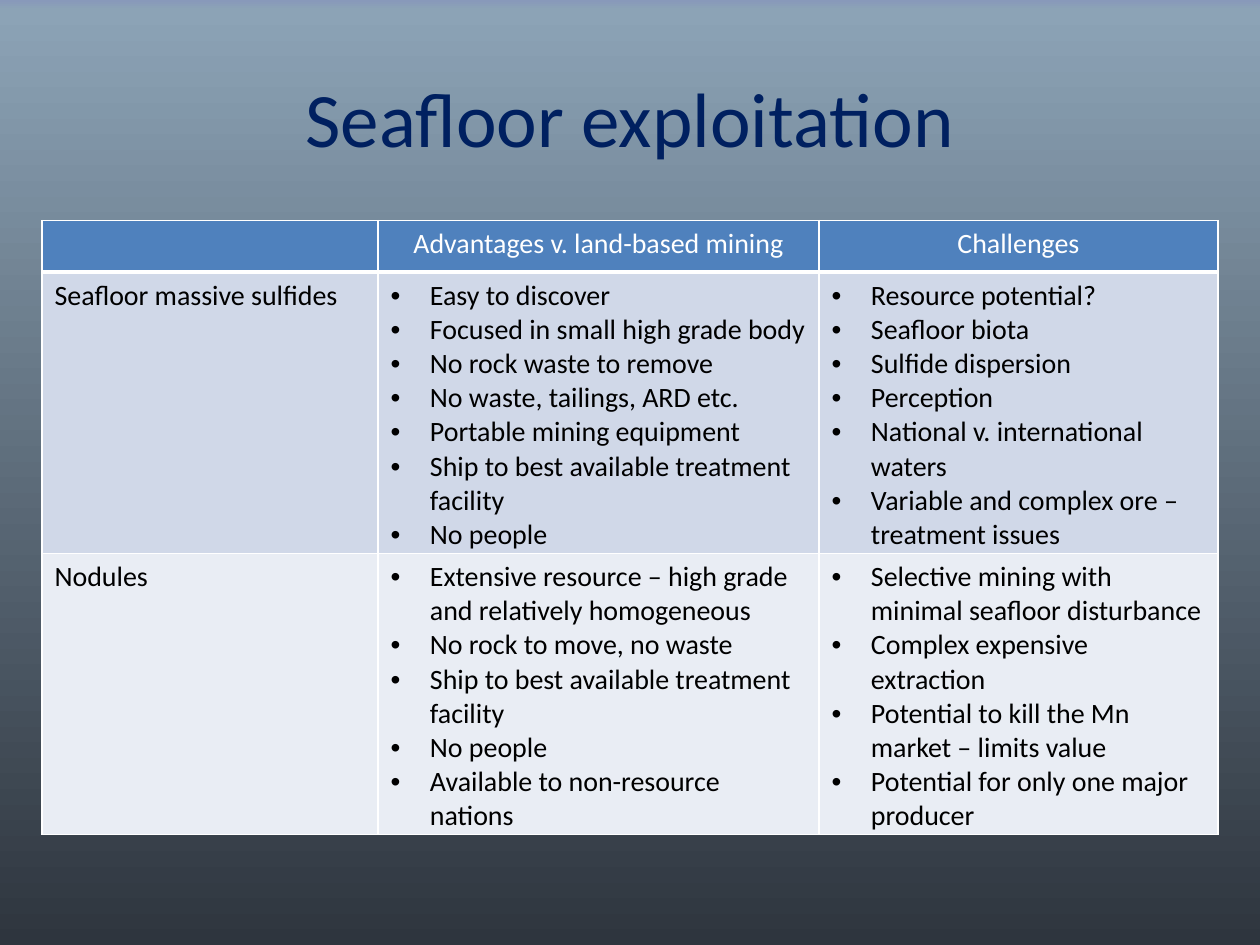
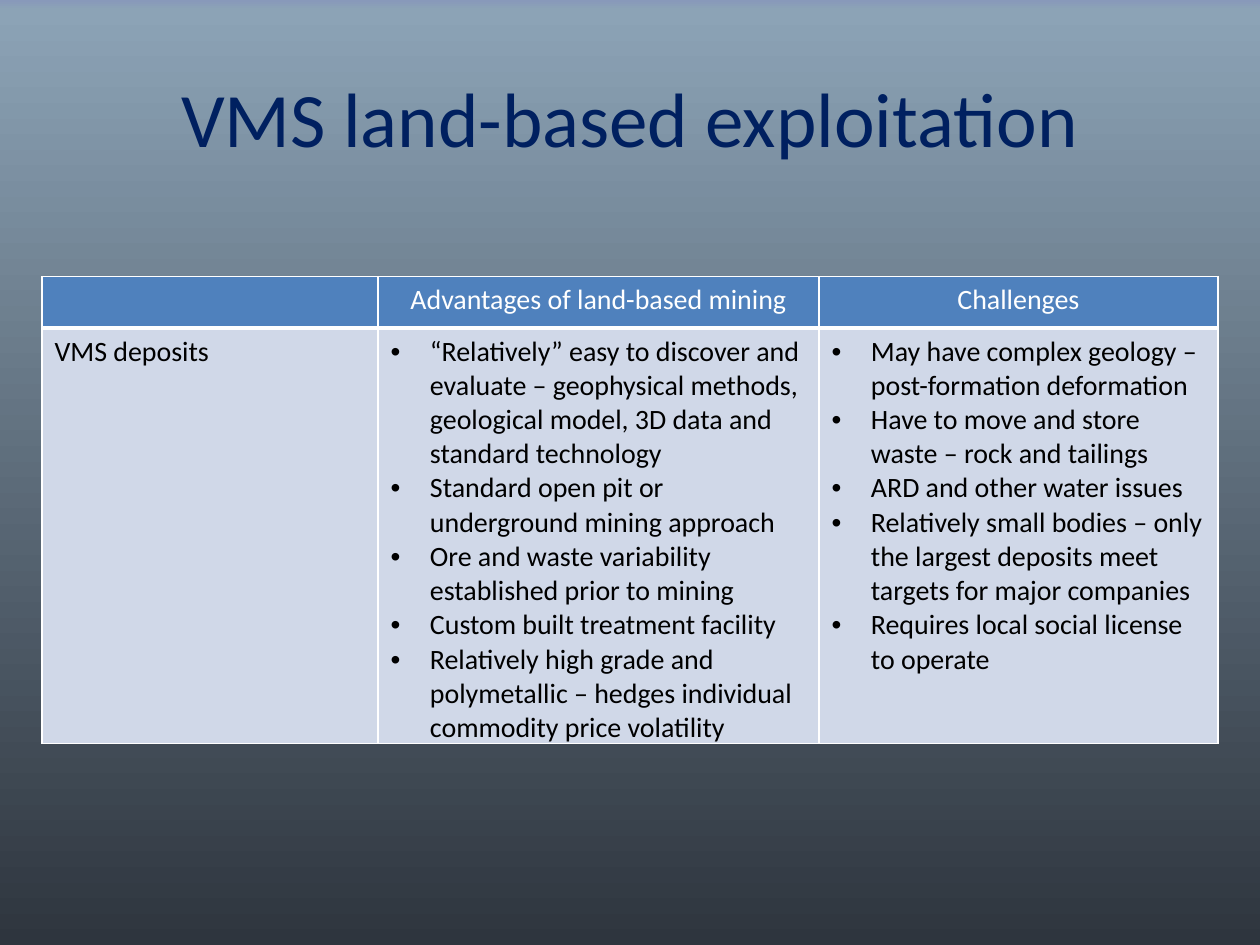
from lxml import etree
from pptx import Presentation
from pptx import util as u
from pptx.dml import color
from pptx.enum import text
from pptx.oxml import ns

FONT = "Calibri"
NAVY, BLUE, WHITE, BLACK = "002060", "4F81BD", "FFFFFF", "000000"
BAND_FILLS = ["D0D8E8", "E9EDF4"]
BACKGROUND_STOPS = [(0, "8899BA"), (1, "8CA3B6"), (100, "2E353E")]
TABLE_LEFT = 24
COLUMN_WIDTHS = [192, 252, 228]
HEADER_HEIGHT = 29.5
BULLET_INDENT = 22.5


def rgb(value):
    return color.RGBColor.from_string(value)


def add_child(parent, tag, **attributes):
    return etree.SubElement(parent, ns.qn(tag), **attributes)


def add_background(slide):
    fill = slide.background.fill
    fill.gradient()
    fill.gradient_angle = 270
    stops = slide.element.find(".//" + ns.qn("a:gsLst"))
    for stop in list(stops):
        stops.remove(stop)
    for percent, value in BACKGROUND_STOPS:
        stop = add_child(stops, "a:gs", pos=str(percent * 1000))
        add_child(stop, "a:srgbClr", val=value)


def add_span(para, words, size, value):
    span = para.add_run()
    span.text = words
    span.font.name = FONT
    span.font.size = u.Pt(size)
    span.font.bold = False
    span.font.color.rgb = rgb(value)


def add_title(slide, words):
    box = slide.shapes.add_textbox(u.Pt(36), u.Pt(21.6), u.Pt(648), u.Pt(90))
    frame = box.text_frame
    frame.word_wrap = True
    frame.vertical_anchor = text.MSO_ANCHOR.MIDDLE
    para = frame.paragraphs[0]
    para.alignment = text.PP_ALIGN.CENTER
    add_span(para, words, 44, NAVY)


def style_cell(cell, fill, bottom_width):
    properties = cell._tc.get_or_add_tcPr()
    for side, width in zip("LRTB", (1, 1, 1, bottom_width)):
        line = add_child(properties, f"a:ln{side}", w=str(u.Pt(width)))
        add_child(add_child(line, "a:solidFill"), "a:srgbClr", val=WHITE)
    cell.fill.solid()
    cell.fill.fore_color.rgb = rgb(fill)


def add_bullet(para):
    properties = para._p.get_or_add_pPr()
    properties.set("marL", str(u.Pt(BULLET_INDENT)))
    properties.set("indent", str(-u.Pt(BULLET_INDENT)))
    add_child(properties, "a:buFont", typeface="Arial")
    add_child(properties, "a:buChar", char="•")


def fill_header(cell, words):
    style_cell(cell, BLUE, 3)
    if words:
        para = cell.text_frame.paragraphs[0]
        para.alignment = text.PP_ALIGN.CENTER
        add_span(para, words, 16, WHITE)


def fill_body(cell, lines, fill, bulleted):
    style_cell(cell, fill, 1)
    frame = cell.text_frame
    for index, words in enumerate(lines):
        para = frame.add_paragraph() if index else frame.paragraphs[0]
        if bulleted:
            add_bullet(para)
        add_span(para, words, 16, BLACK)


def add_comparison(slide, top, row_height, advantages_heading, deposits):
    height = HEADER_HEIGHT + row_height * len(deposits)
    table = slide.shapes.add_table(
        len(deposits) + 1, len(COLUMN_WIDTHS), u.Pt(TABLE_LEFT), u.Pt(top),
        u.Pt(sum(COLUMN_WIDTHS)), u.Pt(height)).table
    table.first_row = table.horz_banding = False
    for column, width in zip(table.columns, COLUMN_WIDTHS):
        column.width = u.Pt(width)
    for index, row in enumerate(table.rows):
        row.height = u.Pt(row_height if index else HEADER_HEIGHT)
    for column, words in enumerate(["", advantages_heading, "Challenges"]):
        fill_header(table.cell(0, column), words)
    for index, (name, advantages, challenges) in enumerate(deposits):
        fill = BAND_FILLS[index % 2]
        for column, lines in enumerate([[name], advantages, challenges]):
            fill_body(table.cell(index + 1, column), lines, fill, column > 0)


def add_slide(deck, title, *comparison):
    slide = deck.slides.add_slide(deck.slide_layouts[6])
    add_background(slide)
    add_title(slide, title)
    add_comparison(slide, *comparison)


SEAFLOOR_DEPOSITS = [
    ("Seafloor massive sulfides",
     ["Easy to discover",
      "Focused in small high grade body",
      "No rock waste to remove",
      "No waste, tailings, ARD etc.",
      "Portable mining equipment",
      "Ship to best available treatment facility",
      "No people"],
     ["Resource potential?",
      "Seafloor biota",
      "Sulfide dispersion",
      "Perception",
      "National v. international waters",
      "Variable and complex ore – treatment issues"]),
    ("Nodules",
     ["Extensive resource – high grade and relatively homogeneous",
      "No rock to move, no waste",
      "Ship to best available treatment facility",
      "No people",
      "Available to non-resource nations"],
     ["Selective mining with minimal seafloor disturbance",
      "Complex expensive extraction",
      "Potential to kill the Mn market – limits value",
      "Potential for only one major producer"]),
]

LAND_DEPOSITS = [
    ("VMS deposits",
     ["“Relatively” easy to discover and evaluate – geophysical methods, "
      "geological model, 3D data and standard technology",
      "Standard open pit or underground mining approach",
      "Ore and waste variability established prior to mining",
      "Custom built treatment facility",
      "Relatively high grade and polymetallic – hedges individual "
      "commodity price volatility"],
     ["May have complex geology – post-formation deformation",
      "Have to move and store waste – rock and tailings",
      "ARD and other water issues",
      "Relatively small bodies – only the largest deposits meet targets "
      "for major companies",
      "Requires local social license to operate"]),
]


def main():
    deck = Presentation()
    deck.slide_width, deck.slide_height = u.Pt(720), u.Pt(540)
    add_slide(deck, "Seafloor exploitation", 126, 160.5,
              "Advantages v. land-based mining", SEAFLOOR_DEPOSITS)
    add_slide(deck, "VMS land-based exploitation", 158, 237.5,
              "Advantages of land-based mining", LAND_DEPOSITS)
    deck.save("out.pptx")


if __name__ == "__main__":
    main()
